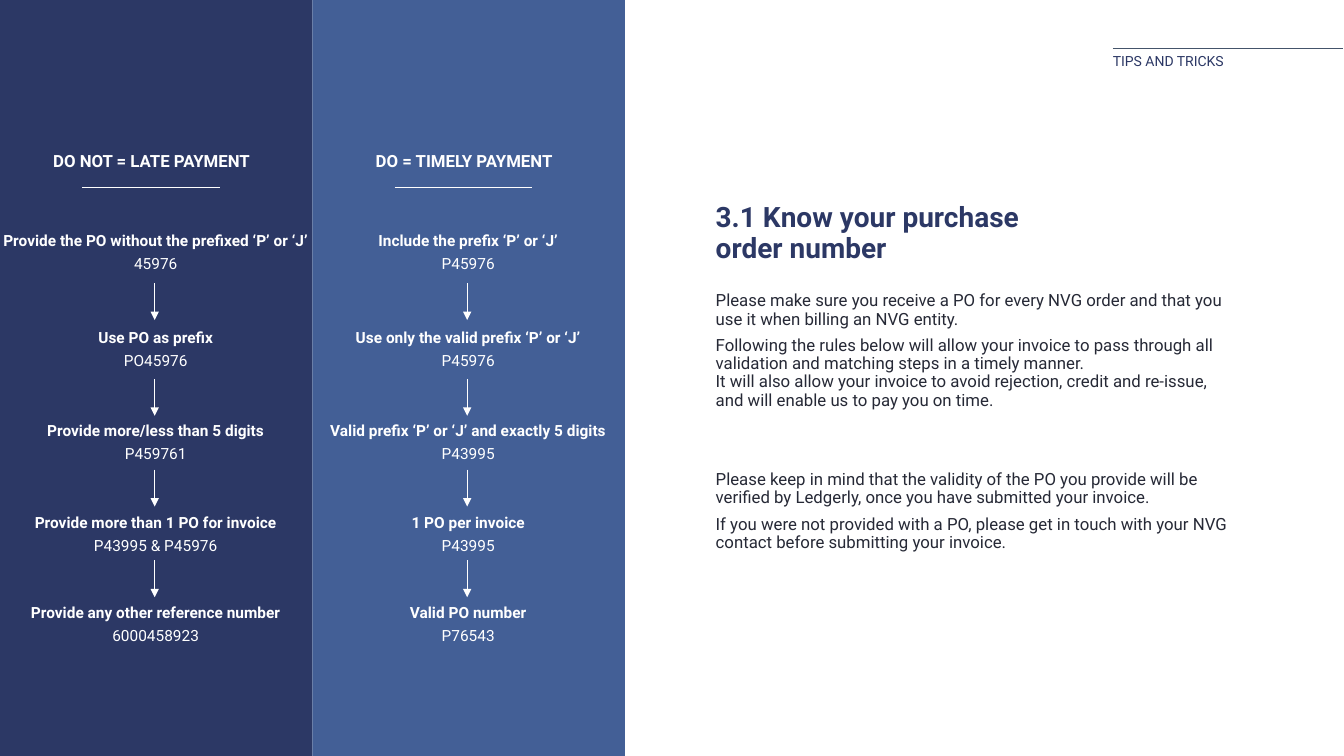
from copy import deepcopy
from dataclasses import dataclass

from lxml import etree
from pptx import Presentation
from pptx.dml.color import RGBColor
from pptx.enum.shapes import MSO_CONNECTOR, MSO_SHAPE
from pptx.enum.text import MSO_ANCHOR, MSO_AUTO_SIZE, PP_ALIGN
from pptx.oxml.ns import qn
from pptx.slide import Slide
from pptx.util import Inches, Length, Pt

STRAIGHT = MSO_CONNECTOR.STRAIGHT
RECTANGLE = MSO_SHAPE.RECTANGLE
TOP, MIDDLE = MSO_ANCHOR.TOP, MSO_ANCHOR.MIDDLE
LEFT, CENTER = PP_ALIGN.LEFT, PP_ALIGN.CENTER
GROW, FIXED = MSO_AUTO_SIZE.SHAPE_TO_FIT_TEXT, MSO_AUTO_SIZE.NONE

FONT = "Roboto"
COLORS = {
    "navy": "2C3865",
    "blue": "435F96",
    "white": "FFFFFF",
    "body": "262936",
    "slate": "44546A",
}

# The slide is a grid of tenth-of-an-inch cells.
CELL = 0.1
SLIDE_COLUMNS, SLIDE_ROWS = 133.33, 75
PANEL_COLUMNS = 31
STEP_ROWS = (23.1, 32.8, 42, 51.1, 60)
ARROW_ROWS = (28.1, 37.6, 46.6, 55.6)
ARROW_LENGTH = 3.65
VALUE_OFFSET = 2.28
TEXT_LEFT, TEXT_COLUMNS = 71, 51.9
HEADER_LEFT = 110.4


@dataclass(frozen=True)
class Step:
    label: str
    value: str


@dataclass(frozen=True)
class Panel:
    title: str
    fill: str
    steps: tuple[Step, ...]


@dataclass(frozen=True)
class BodyParagraph:
    text: str
    space_before: float = 6


PANELS = (
    Panel("DO NOT = LATE PAYMENT", "navy", (
        Step("Provide the PO without the prefixed ‘P’ or ‘J’", "45976"),
        Step("Use PO as prefix", "PO45976"),
        Step("Provide more/less than 5 digits", "P459761"),
        Step("Provide more than 1 PO for invoice", "P43995 & P45976"),
        Step("Provide any other reference number", "6000458923"),
    )),
    Panel("DO = TIMELY PAYMENT", "blue", (
        Step("Include the prefix ‘P’ or ‘J’", "P45976"),
        Step("Use only the valid prefix ‘P’ or ‘J’", "P45976"),
        Step("Valid prefix ‘P’ or ‘J’ and exactly 5 digits", "P43995"),
        Step("1 PO per invoice", "P43995"),
        Step("Valid PO number", "P76543"),
    )),
)

BODY = (
    BodyParagraph("Please make sure you receive a PO for every NVG order and that "
                  "you use it when billing an NVG entity."),
    BodyParagraph("Following the rules below will allow your invoice to pass through "
                  "all validation and matching steps in a timely manner. \v"
                  "It will also allow your invoice to avoid rejection, credit and "
                  "re-issue, and will enable us to pay you on time."),
    BodyParagraph("Please keep in mind that the validity of the PO you provide will "
                  "be verified by Ledgerly, once you have submitted your invoice.", 44),
    BodyParagraph("If you were not provided with a PO, please get in touch with your "
                  "NVG contact before submitting your invoice."),
)


def cells(count: float) -> Length:
    return Inches(count * CELL)


def add_text(slide: Slide, paragraphs: tuple[BodyParagraph, ...], left: float, top: float,
             width: float, height: float, *, size: float, color: str, bold: bool = False,
             align: PP_ALIGN = LEFT, anchor: MSO_ANCHOR = MIDDLE,
             auto_size: MSO_AUTO_SIZE = FIXED) -> None:
    shape = slide.shapes.add_textbox(cells(left), cells(top), cells(width), cells(height))
    frame = shape.text_frame
    frame.margin_left = frame.margin_right = frame.margin_top = frame.margin_bottom = 0
    frame.word_wrap = True
    frame.auto_size = auto_size
    frame.vertical_anchor = anchor
    for index, content in enumerate(paragraphs):
        paragraph = frame.add_paragraph() if index else frame.paragraphs[0]
        paragraph.text = content.text
        paragraph.alignment = align
        paragraph.line_spacing = 0.9
        paragraph.space_before = Pt(content.space_before)
        for run in paragraph.runs:
            run.font.name = FONT
            run.font.size = Pt(size)
            run.font.bold = bold
            run.font.color.rgb = RGBColor.from_string(COLORS[color])
        run_format = paragraph._p.find(qn("a:r")).find(qn("a:rPr"))
        for line_break in paragraph._p.findall(qn("a:br")):
            line_break.append(deepcopy(run_format))


def add_line(slide: Slide, start: tuple[float, float], end: tuple[float, float],
             color: str, arrow: bool = False) -> None:
    connector = slide.shapes.add_connector(STRAIGHT, *map(cells, start + end))
    connector.line.color.rgb = RGBColor.from_string(COLORS[color])
    connector.line.width = Pt(0.5)
    if arrow:
        etree.SubElement(connector.line._get_or_add_ln(), qn("a:tailEnd"), type="triangle")
    etree.SubElement(connector._element.spPr, qn("a:effectLst"))


def add_panel_text(slide: Slide, text: str, left: float, top: float, width: float,
                   size: float, bold: bool) -> None:
    add_text(slide, (BodyParagraph(text),), left, top, width, 1.7, size=size, color="white",
             bold=bold, align=CENTER, anchor=TOP, auto_size=GROW)


def add_panel(slide: Slide, panel: Panel, left: float) -> None:
    shape = slide.shapes.add_shape(RECTANGLE, cells(left), 0,
                                   cells(PANEL_COLUMNS), cells(SLIDE_ROWS))
    shape.shadow.inherit = False
    shape.fill.solid()
    shape.fill.fore_color.rgb = RGBColor.from_string(COLORS[panel.fill])
    shape.line.fill.background()

    add_panel_text(slide, panel.title, left + 4.1, 15.2, 21.9, 12, True)
    add_line(slide, (left + 8.15, 18.6), (left + 21.8, 18.6), "white")
    for step, top in zip(panel.steps, STEP_ROWS):
        add_panel_text(slide, step.label, left, top, 30.9, 11, True)
        add_panel_text(slide, step.value, left, top + VALUE_OFFSET, 30.9, 11, False)
    arrow_left = left + 15.35
    for top in ARROW_ROWS:
        add_line(slide, (arrow_left, top), (arrow_left, top + ARROW_LENGTH), "white", arrow=True)


def main() -> None:
    presentation = Presentation()
    presentation.slide_width = cells(SLIDE_COLUMNS)
    presentation.slide_height = cells(SLIDE_ROWS)
    slide = presentation.slides.add_slide(presentation.slide_layouts[6])

    for index, panel in enumerate(PANELS):
        add_panel(slide, panel, index * PANEL_COLUMNS)

    add_line(slide, (HEADER_LEFT, 4.8), (133.2, 4.8), "slate")
    add_text(slide, (BodyParagraph("TIPS AND TRICKS"),), HEADER_LEFT, 5.2, 21.1, 1.9,
             size=10, color="navy")
    add_text(slide, (BodyParagraph("3.1 Know your purchase \vorder number"),),
             TEXT_LEFT, 16.5, TEXT_COLUMNS, 13.4, size=20, color="navy", bold=True)
    add_text(slide, BODY, TEXT_LEFT, 28.6, TEXT_COLUMNS, 26.6, size=12, color="body")

    presentation.save("out.pptx")


if __name__ == "__main__":
    main()
